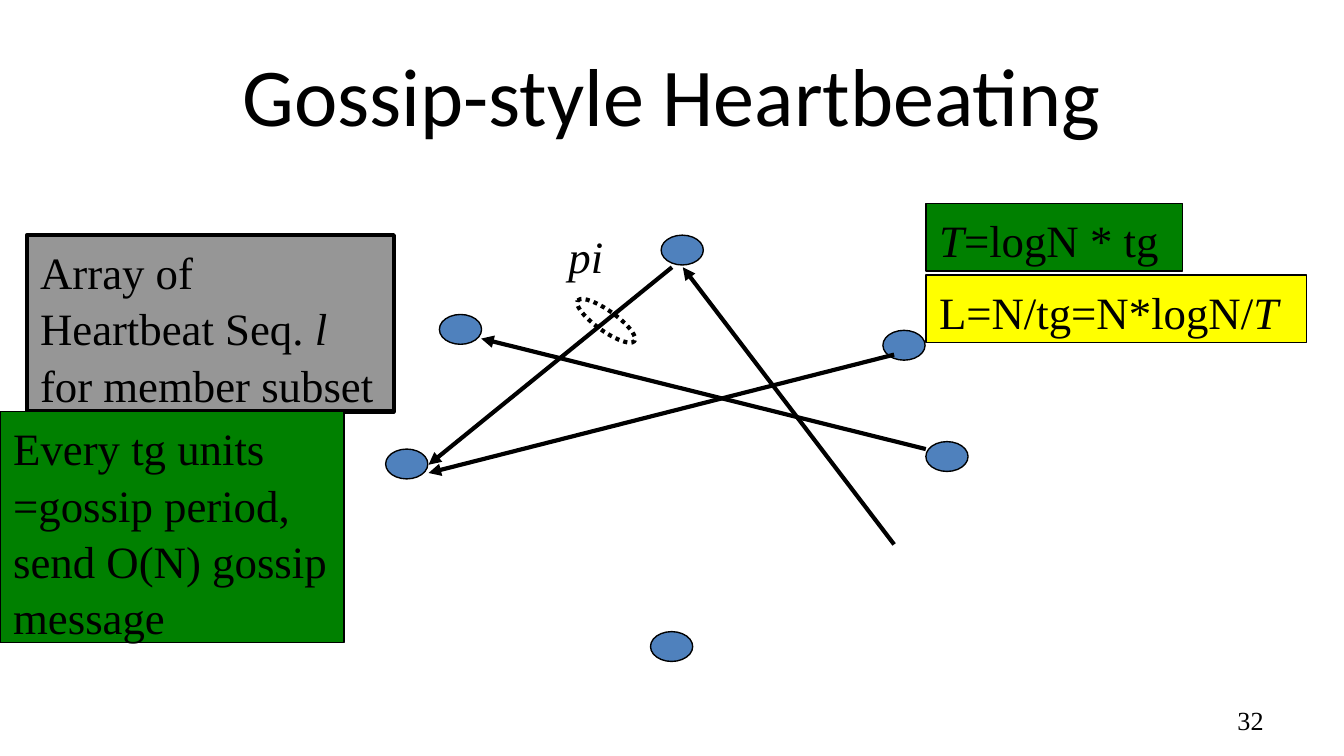
"""Builds the Gossip-style Heartbeating slide."""
from lxml.etree import SubElement
from pptx import Presentation
from pptx.dml.color import RGBColor
from pptx.enum.dml import MSO_LINE
from pptx.enum.shapes import MSO_CONNECTOR, MSO_SHAPE
from pptx.enum.text import MSO_ANCHOR, PP_ALIGN
from pptx.oxml.ns import qn
from pptx.util import Pt

BLACK = RGBColor(0x00, 0x00, 0x00)
BLUE = RGBColor(0x4F, 0x81, 0xBD)
GRAY = RGBColor(0x96, 0x96, 0x96)
GREEN = RGBColor(0x00, 0x80, 0x00)
YELLOW = RGBColor(0xFF, 0xFF, 0x00)
SERIF = "Times New Roman"
THIN, THICK = 0.75, 2.25
NODE_SIZE = (22.6, 16)

TITLE = ("Gossip-style Heartbeating", (36, 16.5, 648, 67.5), "Calibri", 44, PP_ALIGN.CENTER)
PAGE_NUMBER = ("32", (516, 375, 168, 21.5), SERIF, 14, PP_ALIGN.RIGHT)

NODES = [(473, 177), (235.4, 168.5), (206.6, 240.6), (496, 236.6), (354.2, 126), (348.5, 338.4)]
MESSAGES = [
    ((360, 143.2), (229.6, 249)),
    ((479, 190), (229.6, 253.4)),
    ((496, 240.6), (257.8, 181.4)),
    ((479, 291.7), (365.8, 143.2)),
]
GOSSIP_TARGETS = (306, 166.5, 37.4, 10.8)
NOTES = [
    ((14.4, 126, 196.6, 94.5), GRAY, THICK,
     [[("Array of", False)], [("Heartbeat Seq. ", False), ("l", True)], [("for member subset", False)]]),
    ((297.4, 117.4, 44, 36.5), None, None, [[("pi", True)]]),
    ((0, 220.5, 184.3, 123.8), GREEN, THIN,
     [[("Every tg units", False)], [("=gossip period,", False)],
      [("send O(N) gossip", False)], [("message", False)]]),
    ((496, 109, 137.5, 36.2), GREEN, THIN, [[("T", True), ("=logN * tg", False)]]),
    ((496, 147.4, 203.8, 36.2), YELLOW, THIN, [[("L=N/tg=N*logN/", False), ("T", True)]]),
]


def style_run(run, font, size, italic=False):
    run.font.name = font
    run.font.size = Pt(size)
    run.font.italic = italic
    run.font.color.rgb = BLACK


def add_label(slide, wording, box, font, size, align):
    frame = slide.shapes.add_textbox(*map(Pt, box)).text_frame
    frame.word_wrap = True
    frame.vertical_anchor = MSO_ANCHOR.MIDDLE
    frame.text = wording
    frame.paragraphs[0].alignment = align
    style_run(frame.paragraphs[0].runs[0], font, size)


def add_outlined(slide, preset, box, fill, width):
    shape = slide.shapes.add_shape(preset, *map(Pt, box))
    shape.shadow.inherit = False
    if fill is None:
        shape.fill.background()
    else:
        shape.fill.solid()
        shape.fill.fore_color.rgb = fill
    shape.line.color.rgb = BLACK
    shape.line.width = Pt(width)
    return shape


def add_message(slide, start, end):
    arrow = slide.shapes.add_connector(MSO_CONNECTOR.STRAIGHT, *map(Pt, start + end))
    arrow.line.color.rgb = BLACK
    arrow.line.width = Pt(THICK)
    SubElement(arrow.line._get_or_add_ln(), qn("a:tailEnd"), type="triangle")
    SubElement(arrow._element.spPr, qn("a:effectLst"))


def add_note(slide, box, fill, width, lines):
    if fill is None:
        note = slide.shapes.add_textbox(*map(Pt, box))
    else:
        note = add_outlined(slide, MSO_SHAPE.RECTANGLE, box, fill, width)
    frame = note.text_frame
    frame.word_wrap = False
    frame.vertical_anchor = MSO_ANCHOR.TOP
    for index, line in enumerate(lines):
        paragraph = frame.add_paragraph() if index else frame.paragraphs[0]
        paragraph.alignment = PP_ALIGN.LEFT
        paragraph.line_spacing = 1.05
        for wording, italic in line:
            run = paragraph.add_run()
            run.text = wording
            style_run(run, SERIF, 24, italic)


def main():
    deck = Presentation()
    deck.slide_width, deck.slide_height = Pt(720), Pt(405)
    slide = deck.slides.add_slide(deck.slide_layouts[6])
    for label in (PAGE_NUMBER, TITLE):
        add_label(slide, *label)
    for corner in NODES:
        add_outlined(slide, MSO_SHAPE.OVAL, corner + NODE_SIZE, BLUE, THIN)
    for message in MESSAGES:
        add_message(slide, *message)
    for note in NOTES:
        add_note(slide, *note)
    targets = add_outlined(slide, MSO_SHAPE.OVAL, GOSSIP_TARGETS, None, THICK)
    targets.rotation = 35.5
    targets.line.dash_style = MSO_LINE.ROUND_DOT
    deck.save("out.pptx")


if __name__ == "__main__":
    main()
